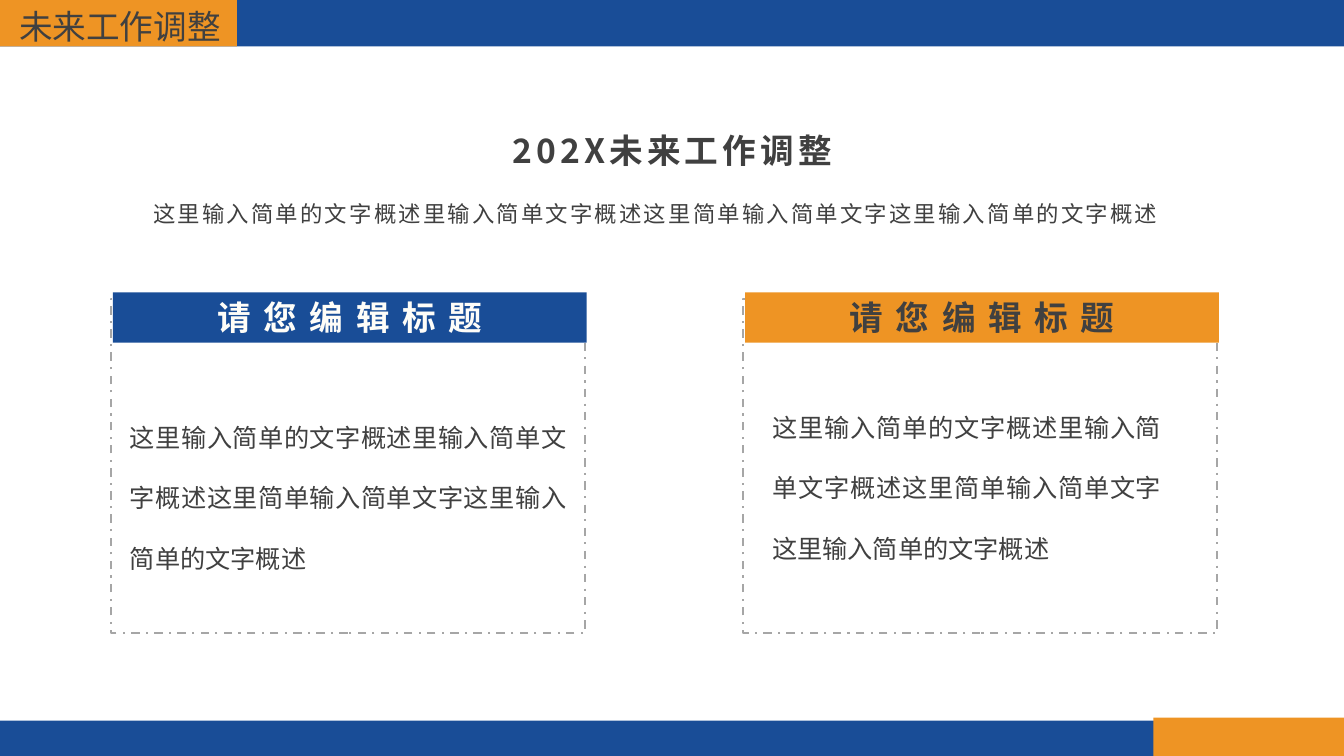
from lxml import etree
from pptx import Presentation
from pptx.dml.color import RGBColor
from pptx.enum.dml import MSO_LINE
from pptx.enum.shapes import MSO_SHAPE
from pptx.enum.text import MSO_ANCHOR, MSO_AUTO_SIZE, PP_ALIGN
from pptx.oxml.ns import qn
from pptx.util import Inches, Pt

RECTANGLE = MSO_SHAPE.RECTANGLE
DASH_DOT = MSO_LINE.DASH_DOT
TOP, MIDDLE = MSO_ANCHOR.TOP, MSO_ANCHOR.MIDDLE
LEFT, CENTER, JUSTIFY = PP_ALIGN.LEFT, PP_ALIGN.CENTER, PP_ALIGN.JUSTIFY
GROW = MSO_AUTO_SIZE.SHAPE_TO_FIT_TEXT

FONT = "Noto Sans CJK SC"
COLORS = {
    "blue": "194D97",
    "orange": "EE9424",
    "ink": "404040",
    "cream": "FEFDF8",
    "border": "A6A6A6",
}
SUMMARY = "这里输入简单的文字概述里输入简单文字概述这里简单输入简单文字这里输入简单的文字概述"


def color(name):
    return RGBColor.from_string(COLORS[name])


def add_rectangle(shapes, left, top, width, height, fill=None):
    """Add a filled bar, or a dash-dot frame when no fill is given."""
    box = shapes.add_shape(
        RECTANGLE, Inches(left), Inches(top), Inches(width), Inches(height)
    )
    box.shadow.inherit = False
    if fill:
        box.fill.solid()
        box.fill.fore_color.rgb = color(fill)
        box.line.fill.background()
    else:
        box.fill.background()
        box.line.color.rgb = color("border")
        box.line.width = Pt(1.5)
        box.line.dash_style = DASH_DOT
    return box


def write_text(box, text, size, ink="ink", bold=False, align=JUSTIFY,
               line_spacing=1, letter_spacing=0):
    """Write one paragraph, with letter spacing in points."""
    para = box.text_frame.paragraphs[0]
    para.text = text
    para.alignment = align
    para.line_spacing = line_spacing
    para.font.name = FONT
    para.font.size = Pt(size)
    para.font.bold = bold
    para.font.color.rgb = color(ink)
    # East Asian typeface and letter spacing
    properties = para._p.pPr.find(qn("a:defRPr"))
    properties.set("spc", str(round(letter_spacing * 100)))
    etree.SubElement(properties, qn("a:ea")).set("typeface", FONT)


def add_text(shapes, left, top, width, height, text, size, wrap=True,
             anchor=TOP, margins=(0.1, 0.05, 0.1, 0.05), grow=True, **style):
    box = shapes.add_textbox(
        Inches(left), Inches(top), Inches(width), Inches(height)
    )
    frame = box.text_frame
    frame.word_wrap = wrap
    frame.vertical_anchor = anchor
    if grow:
        frame.auto_size = GROW
    (frame.margin_left, frame.margin_top,
     frame.margin_right, frame.margin_bottom) = map(Inches, margins)
    write_text(box, text, size, **style)


def add_card(page, left, fill, ink, body_left, body_top, body_width):
    """Add a framed card with a title bar and a body text."""
    shapes = page.shapes.add_group_shape().shapes
    add_rectangle(shapes, left, 2.97, 4.7, 3.31)
    add_text(shapes, body_left, body_top, body_width, 1.83, SUMMARY, 18,
             line_spacing=2)
    title_bar = add_rectangle(shapes, left + 0.02, 2.9, 4.7, 0.5, fill)
    title_bar.text_frame.auto_size = GROW
    write_text(title_bar, "请您编辑标题", 24, ink=ink, bold=True,
               align=CENTER, letter_spacing=9)


def main():
    deck = Presentation()
    deck.slide_width, deck.slide_height = Inches(13.33), Inches(7.5)
    page = deck.slides.add_slide(deck.slide_layouts[6])

    # Header and footer bars
    add_rectangle(page.shapes, 0, 0, 13.33, 0.46, "blue")
    add_rectangle(page.shapes, 0, 7.15, 13.33, 0.35, "blue")
    add_rectangle(page.shapes, 11.44, 7.12, 1.89, 0.38, "orange")
    add_rectangle(page.shapes, 0, 0, 2.35, 0.46, "orange")
    add_text(page.shapes, 0.09, 0.01, 2.22, 0.5, "未来工作调整", 24, wrap=False)

    # Heading and summary
    add_text(page.shapes, 4.98, 1.1, 3.68, 0.57, "202X未来工作调整", 24,
             anchor=MIDDLE, grow=False, bold=True, align=LEFT,
             line_spacing=1.5, letter_spacing=3)
    add_text(page.shapes, 1.41, 1.77, 10.68, 0.48, SUMMARY, 16,
             margins=(0.11, 0, 0.09, 0), line_spacing=1.8, letter_spacing=1.6)

    # Cards
    add_card(page, 1.1, "blue", "cream", 1.19, 3.84, 4.53)
    add_card(page, 7.37, "orange", "ink", 7.56, 3.74, 4.06)

    deck.save("out.pptx")


if __name__ == "__main__":
    main()
